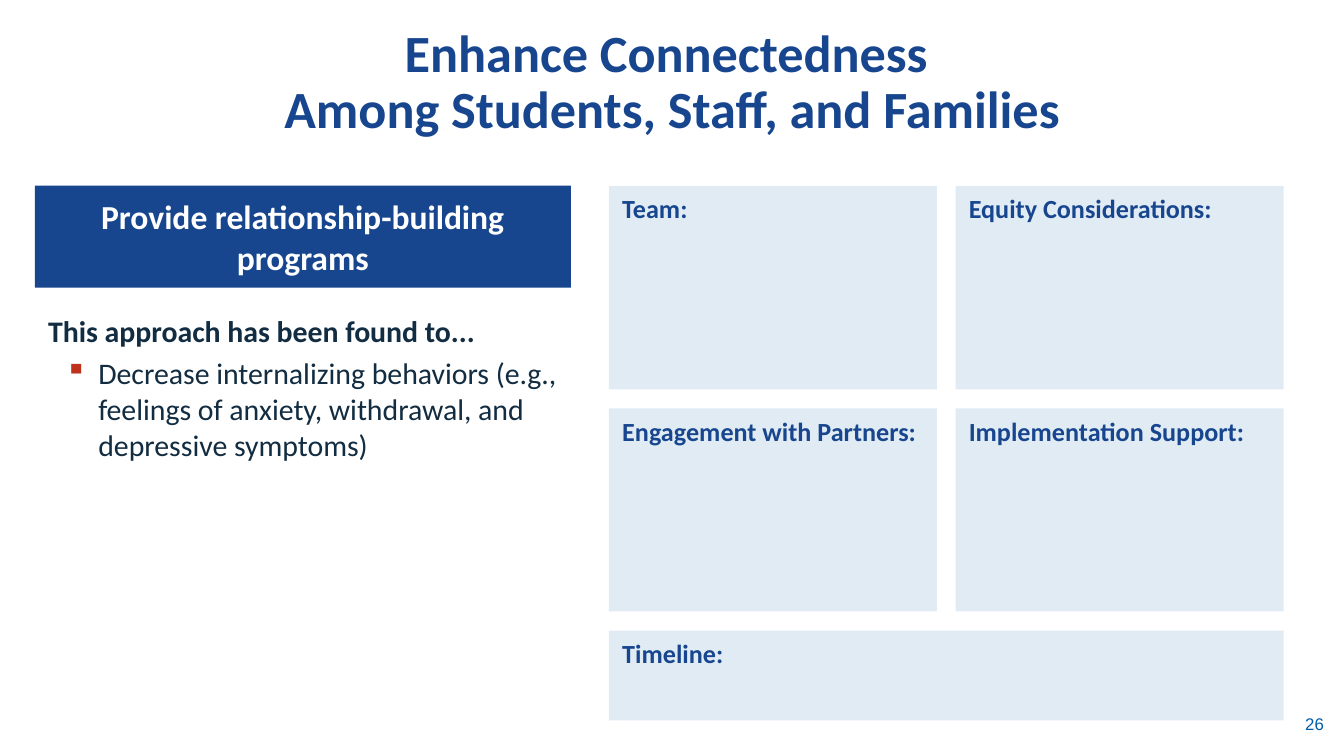
from lxml.etree import SubElement
from pptx import Presentation
from pptx.dml.color import RGBColor
from pptx.enum.shapes import MSO_SHAPE
from pptx.enum.text import MSO_ANCHOR, PP_ALIGN
from pptx.oxml.ns import qn
from pptx.util import Cm, Pt

COLORS = {
    "navy": "17468F",
    "panel": "86B2D7",
    "ink": "122C41",
    "bullet": "BF311B",
    "number": "015DAA",
    "white": "FFFFFF",
}


def rgb(name):
    """Return the named colour."""
    return RGBColor.from_string(COLORS[name])


def add_run(p, text, size, color, bold=True, font="Calibri"):
    """Add one formatted run to a paragraph."""
    r = p.add_run()
    r.text = text
    r.font.name = font
    r.font.size = Pt(size)
    r.font.bold = bold
    r.font.color.rgb = rgb(color)


def add_text_box(s, left, top, width, height, anchor=MSO_ANCHOR.TOP):
    """Add a wrapping text box and return its text frame."""
    tf = s.shapes.add_textbox(Cm(left), Cm(top), Cm(width), Cm(height)).text_frame
    tf.word_wrap = True
    tf.vertical_anchor = anchor
    return tf


def add_box(s, left, top, width, height, fill, anchor=MSO_ANCHOR.TOP, opacity=100):
    """Add a borderless rectangle and return its text frame."""
    sp = s.shapes.add_shape(MSO_SHAPE.RECTANGLE, Cm(left), Cm(top), Cm(width), Cm(height))
    sp.shadow.inherit = False
    sp.line.fill.background()
    sp.fill.solid()
    sp.fill.fore_color.rgb = rgb(fill)
    if opacity < 100:
        color = sp.fill._xPr.find(qn("a:solidFill"))[0]
        SubElement(color, qn("a:alpha"), val=str(opacity * 1000))
    tf = sp.text_frame
    tf.word_wrap = True
    tf.vertical_anchor = anchor
    return tf


def add_panel(s, label, left, top, width, height):
    """Add a pale planning panel with its label."""
    tf = add_box(s, left, top, width, height, "panel", opacity=25)
    p = tf.paragraphs[0]
    p.alignment = PP_ALIGN.LEFT
    add_run(p, label, 14, "navy")


def add_title(s, lines):
    """Add the centred slide title, one line per string."""
    p = add_text_box(s, 1.27, 0.36, 22.86, 2.39, MSO_ANCHOR.BOTTOM).paragraphs[0]
    p.alignment = PP_ALIGN.CENTER
    p.line_spacing = Pt(30)
    for i, line in enumerate(lines):
        if i:
            p.add_line_break()
        add_run(p, line, 28, "navy")


def add_banner(s, text):
    """Add the dark banner above the findings."""
    tf = add_box(s, 0.66, 3.51, 10.13, 1.93, "navy", MSO_ANCHOR.MIDDLE)
    p = tf.paragraphs[0]
    p.alignment = PP_ALIGN.CENTER
    add_run(p, text, 18, "white")


def add_findings(s, heading, items):
    """Add a bold heading followed by square-bulleted items."""
    tf = add_text_box(s, 0.66, 5.79, 10.13, 3.84)
    add_run(tf.paragraphs[0], heading, 16, "ink")
    for item in items:
        p = tf.add_paragraph()
        p.space_before = Pt(3.2)
        pPr = p._p.get_or_add_pPr()
        pPr.set("marL", str(Cm(0.95)))
        pPr.set("indent", str(Cm(-0.63)))
        color = SubElement(pPr, qn("a:buClr"))
        SubElement(color, qn("a:srgbClr"), val=COLORS["bullet"])
        SubElement(pPr, qn("a:buChar"), char="▪")
        add_run(p, item, 16, "ink", bold=False)


def add_page_number(s, number):
    """Add the page number at the lower right."""
    p = add_text_box(s, 23.09, 13.31, 2.18, 0.76, MSO_ANCHOR.MIDDLE).paragraphs[0]
    p.alignment = PP_ALIGN.RIGHT
    add_run(p, number, 9, "number", bold=False, font="Arial")


def main():
    """Build and save the slide."""
    prs = Presentation()
    prs.slide_width, prs.slide_height = Cm(25.4), Cm(14.29)
    s = prs.slides.add_slide(prs.slide_layouts[6])

    add_title(s, ["Enhance Connectedness ", "Among Students, Staff, and Families"])
    add_banner(s, "Provide relationship-building programs")
    add_findings(s, "This approach has been found to...", [
        "Decrease internalizing behaviors (e.g., feelings of anxiety, "
        "withdrawal, and depressive symptoms)",
    ])

    left, top, width, height = 11.51, 3.52, 6.2, 3.84
    col_step, row_step = 6.55, 4.2
    labels = [
        ["Team:", "Equity Considerations:"],
        ["Engagement with Partners:", "Implementation Support:"],
    ]
    for row, names in enumerate(labels):
        for col, label in enumerate(names):
            add_panel(s, label, left + col * col_step, top + row * row_step, width, height)
    add_panel(s, "Timeline:", left, top + 2 * row_step, col_step + width, 1.7)

    add_page_number(s, "26")
    prs.save("out.pptx")


if __name__ == "__main__":
    main()
